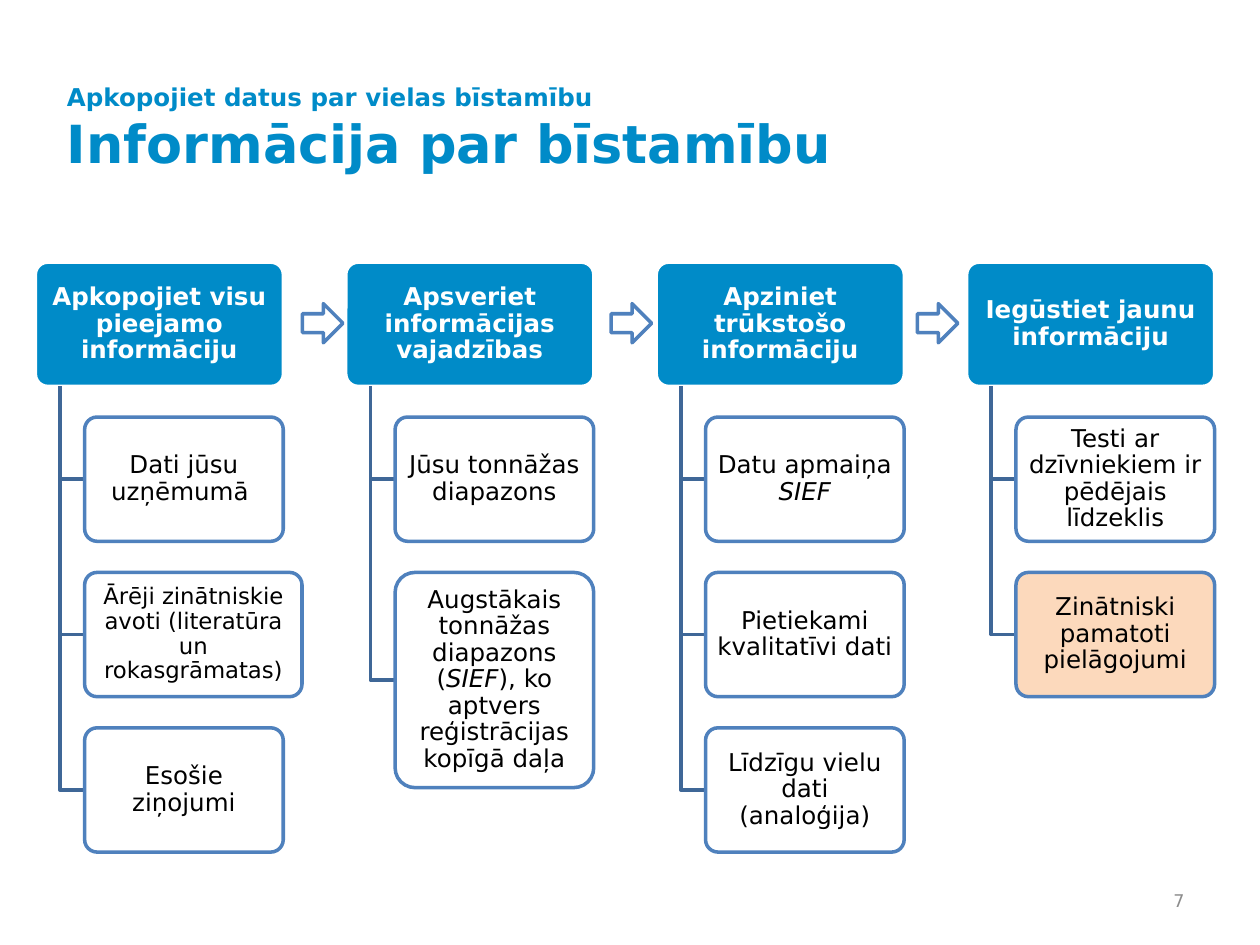
"""Build the hazard information slide with four columns of steps."""
import lxml.etree
import pptx
import pptx.dml.color
import pptx.enum.shapes
import pptx.enum.text
import pptx.oxml.ns
import pptx.util

Pt = pptx.util.Pt
ALIGN = pptx.enum.text.PP_ALIGN
SHAPE = pptx.enum.shapes.MSO_SHAPE

BLUE, OUTLINE, STEM, PEACH = "008BC8", "4F81BD", "3F6797", "FCD5B5"
WHITE, BLACK, GREY = "FFFFFF", "000000", "8C8C8C"

COLUMN_LEFT, COLUMN_STEP = 20.2, 177.4
HEAD_TOP, HEAD_WIDTH, BOX_HEIGHT = 149.8, 141.8, 71
STEM_INDENT, CHILD_INDENT, CHILD_WIDTH = 14, 28.2, 113.5
CHILD_TOP, CHILD_STEP = 238.3, 88.8
ARROW_LEFTS = (172.8, 349.2, 524.2)

COLUMNS = [
    ("Apkopojiet visu pieejamo informāciju", [
        ("Dati jūsu uzņēmumā ", {}),
        ("Ārēji zinātniskie avoti (literatūra un rokasgrāmatas)",
         {"width": 124.2, "size": 13}),
        ("Esošie ziņojumi", {})]),
    ("Apsveriet informācijas vajadzības", [
        ("Jūsu tonnāžas diapazons", {}),
        ("Augstākais tonnāžas diapazons (*SIEF*), ko aptvers "
         "reģistrācijas kopīgā daļa", {"height": 123})]),
    ("Apziniet trūkstošo informāciju", [
        ("Datu apmaiņa *SIEF*", {}),
        ("Pietiekami kvalitatīvi dati", {}),
        ("Līdzīgu vielu dati (analoģija)", {})]),
    ("Iegūstiet jaunu informāciju", [
        ("Testi ar dzīvniekiem ir pēdējais līdzeklis", {}),
        ("Zinātniski pamatoti pielāgojumi", {"fill": PEACH})]),
]


def color(value):
    return pptx.dml.color.RGBColor.from_string(value)


class SlideBuilder:
    def __init__(self, slide, font_name="DejaVu Sans", line_width=2):
        self.slide = slide
        self.font_name = font_name
        self.line_width = line_width

    def format_span(self, span, size, ink, bold=False, italic=False):
        span.font.name = self.font_name
        span.font.size = Pt(size)
        span.font.bold = bold
        span.font.italic = italic
        span.font.color.rgb = color(ink)

    def outline(self, shape, ink):
        shape.shadow.inherit = False
        shape.line.color.rgb = color(ink)
        shape.line.width = Pt(self.line_width)

    def preset(self, kind, left, top, width, height, fill, line, adjustment):
        shape = self.slide.shapes.add_shape(
            kind, Pt(left), Pt(top), Pt(width), Pt(height))
        shape.adjustments[0] = adjustment
        shape.fill.solid()
        shape.fill.fore_color.rgb = color(fill)
        self.outline(shape, line)
        return shape

    def title(self, lines, left, top, width, height):
        box = self.slide.shapes.title
        box.left, box.top = Pt(left), Pt(top)
        box.width, box.height = Pt(width), Pt(height)
        frame = box.text_frame
        frame.text = "\n".join(text for text, size in lines)
        frame.auto_size = pptx.enum.text.MSO_AUTO_SIZE.NONE
        frame.vertical_anchor = pptx.enum.text.MSO_ANCHOR.MIDDLE
        for para, (text, size) in zip(frame.paragraphs, lines):
            para.alignment = ALIGN.LEFT
            para.space_before = Pt(0)
            self.format_span(para.runs[0], size, BLUE, bold=True)

    def page_number(self, text, left, top, width, height):
        box = self.slide.shapes.add_textbox(
            Pt(left), Pt(top), Pt(width), Pt(height))
        frame = box.text_frame
        frame.word_wrap = True
        frame.vertical_anchor = pptx.enum.text.MSO_ANCHOR.MIDDLE
        frame.text = text
        frame.paragraphs[0].alignment = ALIGN.RIGHT
        self.format_span(frame.paragraphs[0].runs[0], 10, GREY)

    def card(self, text, left, top, width, height, fill, line, ink,
             size=14, bold=False):
        box = self.preset(SHAPE.ROUNDED_RECTANGLE, left, top, width, height,
                          fill, line, 0.1)
        frame = box.text_frame
        frame.word_wrap = True
        frame.vertical_anchor = pptx.enum.text.MSO_ANCHOR.MIDDLE
        frame.margin_left = frame.margin_right = Pt(2.1)
        frame.margin_top = frame.margin_bottom = Pt(1.4)
        para = frame.paragraphs[0]
        para.alignment = ALIGN.CENTER
        para.line_spacing = 0.9
        for index, part in enumerate(text.split("*")):
            if part:
                span = para.add_run()
                span.text = part
                self.format_span(span, size, ink, bold, index % 2 == 1)
        return box

    def child(self, text, left, top, width=CHILD_WIDTH, height=BOX_HEIGHT,
              fill=WHITE, size=14):
        box = self.card(text, left, top, width, height, fill, OUTLINE, BLACK,
                        size)
        tag = pptx.oxml.ns.qn("a:srgbClr")
        fill_color = box.fill._xPr.find(pptx.oxml.ns.qn("a:solidFill")).find(tag)
        alpha = lxml.etree.SubElement(fill_color, pptx.oxml.ns.qn("a:alpha"))
        alpha.set("val", "90000")

    def elbow(self, left, top, right, bottom):
        builder = self.slide.shapes.build_freeform(Pt(left), Pt(top))
        builder.add_line_segments(
            [(Pt(left), Pt(bottom)), (Pt(right), Pt(bottom))], close=False)
        shape = builder.convert_to_shape()
        shape.fill.background()
        self.outline(shape, STEM)

    def arrow(self, left):
        self.preset(SHAPE.RIGHT_ARROW, left, 173.5, 23.2, 22.4,
                    WHITE, OUTLINE, 0.479)

    def column(self, left, heading, children):
        self.card(heading, left, HEAD_TOP, HEAD_WIDTH, BOX_HEIGHT,
                  BLUE, WHITE, WHITE, bold=True)
        child_left = left + CHILD_INDENT
        for row, (text, options) in enumerate(children):
            top = CHILD_TOP + row * CHILD_STEP
            middle = top + options.get("height", BOX_HEIGHT) / 2
            self.elbow(left + STEM_INDENT, HEAD_TOP + BOX_HEIGHT,
                       child_left, middle)
            self.child(text, child_left, top, **options)


def main():
    deck = pptx.Presentation()
    deck.slide_width, deck.slide_height = Pt(720), Pt(540)
    page = SlideBuilder(deck.slides.add_slide(deck.slide_layouts[5]))
    page.title([("Apkopojiet datus par vielas bīstamību", 14),
                ("Informācija par bīstamību", 30)], 31, 28.1, 647.3, 90)
    page.page_number("7", 516.2, 500.4, 167.8, 28.8)
    for index, (heading, children) in enumerate(COLUMNS):
        page.column(COLUMN_LEFT + index * COLUMN_STEP, heading, children)
    for left in ARROW_LEFTS:
        page.arrow(left)
    deck.save("out.pptx")


if __name__ == "__main__":
    main()
